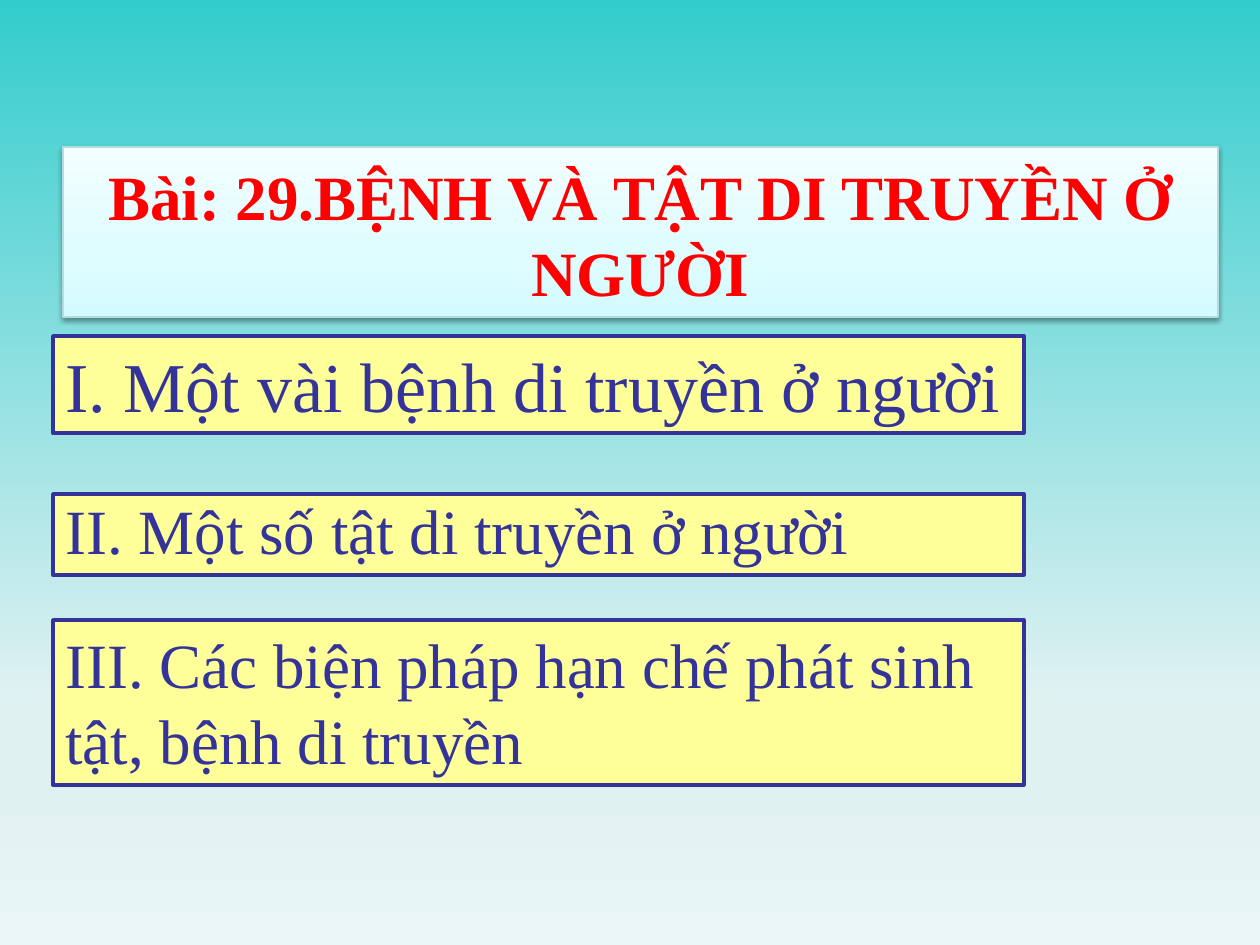
import pptx
import pptx.dml.color
import pptx.enum.shapes
import pptx.enum.text
import pptx.oxml
import pptx.oxml.ns
import pptx.util

PX = 914400 / 126
NS = pptx.oxml.ns.nsdecls("a")
ALIGN = pptx.enum.text.PP_ALIGN
ANCHOR = pptx.enum.text.MSO_ANCHOR


def color(value):
    return pptx.dml.color.RGBColor.from_string(value)


def add_box(text, left, top, width, height, size=36, ink="333399", fill="FFFF99",
            line="333399", line_width=2, bold=False, align=ALIGN.LEFT,
            anchor=ANCHOR.TOP, wrap=True, spacing=None, inset_top=6):
    box = slide.shapes.add_shape(
        pptx.enum.shapes.MSO_SHAPE.RECTANGLE,
        *[round(length * PX) for length in (left, top, width, height)])
    box.shadow.inherit = False
    box.fill.solid()
    box.fill.fore_color.rgb = color(fill)
    box.line.color.rgb = color(line)
    box.line.width = pptx.util.Pt(line_width)
    frame = box.text_frame
    frame.word_wrap = wrap
    frame.auto_size = pptx.enum.text.MSO_AUTO_SIZE.SHAPE_TO_FIT_TEXT
    frame.vertical_anchor = anchor
    frame.margin_top = round(inset_top * PX)
    paragraph = frame.paragraphs[0]
    paragraph.alignment = align
    paragraph.line_spacing = spacing
    run = paragraph.add_run()
    run.text = text
    run.font.name = "Times New Roman"
    run.font.size = pptx.util.Pt(size)
    run.font.bold = bold
    run.font.color.rgb = color(ink)
    return box


presentation = pptx.Presentation()
presentation.slide_width = pptx.util.Inches(10)
presentation.slide_height = pptx.util.Inches(7.5)
slide = presentation.slides.add_slide(presentation.slide_layouts[6])

section_left, section_width = 53, 971
add_box("I. Một vài bệnh di truyền ở người", section_left, 336, section_width, 97,
        size=40, anchor=ANCHOR.MIDDLE, wrap=False)
lesson_title = add_box("Bài: 29.BỆNH VÀ TẬT DI TRUYỀN Ở NGƯỜI", 63, 147, 1155, 170,
                       ink="FF0000", line="B6DCDF", line_width=0.75, bold=True,
                       align=ALIGN.CENTER, inset_top=11)
add_box("II. Một số tật di truyền ở người", section_left, 494, section_width, 81,
        spacing=0.9)
add_box("III. Các biện pháp hạn chế phát sinh tật, bệnh di truyền",
        section_left, 620, section_width, 165)

title_shadow = pptx.oxml.parse_xml(
    f'<a:outerShdw {NS} blurRad="39370" dist="20320" dir="5400000" rotWithShape="0">'
    '<a:srgbClr val="000000"><a:alpha val="38000"/></a:srgbClr></a:outerShdw>')
lesson_title._element.spPr.find(pptx.oxml.ns.qn("a:effectLst")).append(title_shadow)

backdrop_stops = [(0, "33CCCC"), (74, "E0F1F2"), (83, "E0F1F2"), (100, "EBF6F7")]
title_stops = [(0, "D3FBFF"), (35, "DFFCFF"), (100, "F2FEFF")]
for fill, owner, stops, angle in [
    (slide.background.fill, slide._element, backdrop_stops, 270),
    (lesson_title.fill, lesson_title._element, title_stops, 90),
]:
    fill.gradient()
    fill.gradient_angle = angle
    stop_list = next(owner.iter(pptx.oxml.ns.qn("a:gsLst")))
    for old_stop in list(stop_list):
        stop_list.remove(old_stop)
    for position, value in stops:
        stop_list.append(pptx.oxml.parse_xml(
            f'<a:gs {NS} pos="{position * 1000}"><a:srgbClr val="{value}"/></a:gs>'))

presentation.save("out.pptx")
